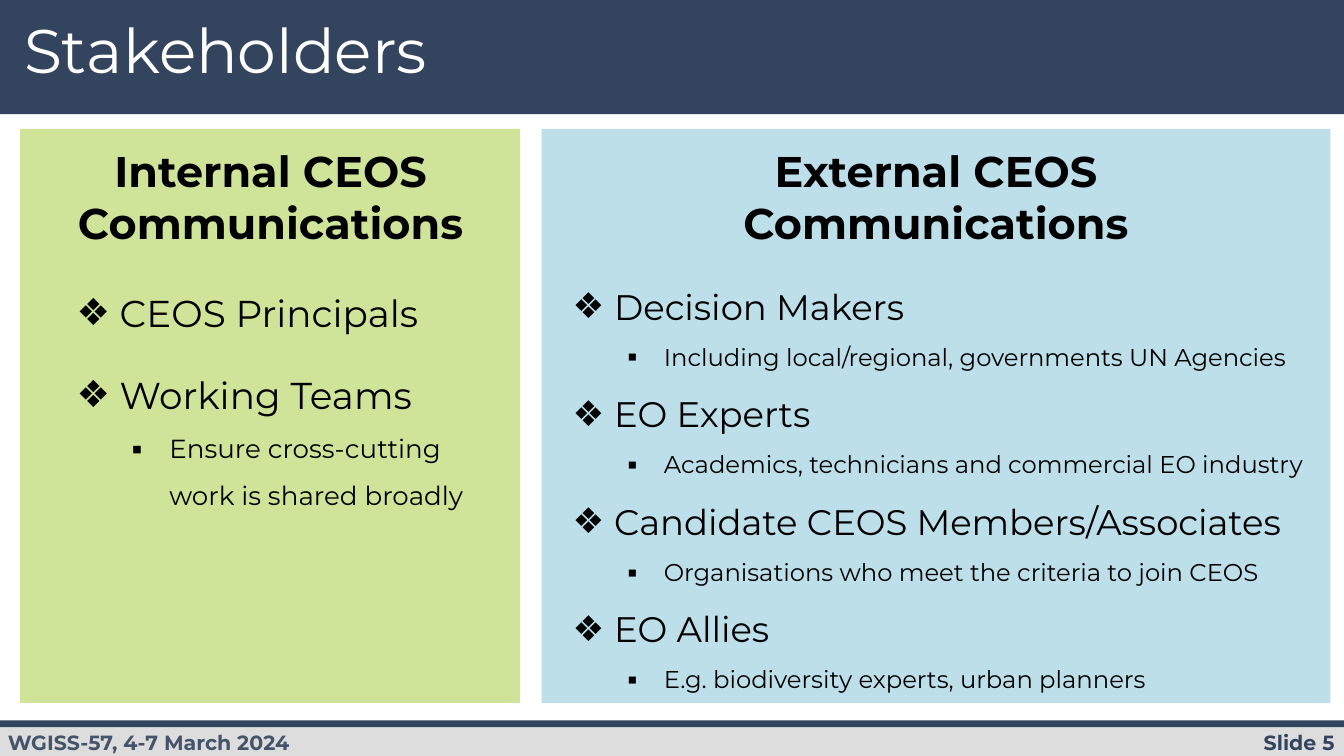
from lxml import etree
from pptx import Presentation
from pptx import util as u
from pptx.dml.color import RGBColor
from pptx.enum import shapes, text
from pptx.oxml import ns

NAVY = RGBColor(0x33, 0x44, 0x5F)
SLATE = RGBColor(0x44, 0x54, 0x6A)
GREY = RGBColor(0xDD, 0xDD, 0xDD)
BLUE = RGBColor(0x7B, 0xC0, 0xD7)
GREEN = RGBColor(0xA3, 0xCB, 0x34)
WHITE = RGBColor(0xFF, 0xFF, 0xFF)
BLACK = RGBColor(0x00, 0x00, 0x00)
LEFT, CENTER, RIGHT = text.PP_ALIGN.LEFT, text.PP_ALIGN.CENTER, text.PP_ALIGN.RIGHT


class SlideBuilder:
    font = "Montserrat"
    bullets = ("❖", "▪")

    def __init__(self, s):
        self.s = s

    def rect(self, box, color, alpha=None):
        sp = self.s.shapes.add_shape(shapes.MSO_SHAPE.RECTANGLE, *map(u.Inches, box))
        sp.shadow.inherit = False
        sp.line.fill.background()
        sp.fill.solid()
        sp.fill.fore_color.rgb = color
        if alpha:
            clr = sp.fill._xPr.find(".//" + ns.qn("a:srgbClr"))
            etree.SubElement(clr, ns.qn("a:alpha"), val=str(alpha * 1000))

    def frame(self, box, inset_x, inset_y):
        tf = self.s.shapes.add_textbox(*map(u.Inches, box)).text_frame
        tf.word_wrap = True
        tf.vertical_anchor = text.MSO_ANCHOR.TOP
        tf.margin_left = tf.margin_right = u.Inches(inset_x)
        tf.margin_top = tf.margin_bottom = u.Inches(inset_y)
        return tf

    def run(self, p, words, size, color, bold=False):
        r = p.add_run()
        r.text = words
        r.font.name = self.font
        r.font.size = u.Pt(size)
        r.font.bold = bold
        r.font.color.rgb = color

    def label(self, box, words, size, color, bold=True, align=LEFT,
              inset=(0.07, 0.04), spacing=1.0):
        p = self.frame(box, *inset).paragraphs[0]
        p.alignment = align
        p.line_spacing = spacing
        self.run(p, words, size, color, bold)

    def bullet(self, p, level, hanging):
        pPr = p._p.get_or_add_pPr()
        pPr.set("marL", str(u.Inches((0.38, 0.75)[level])))
        pPr.set("indent", str(-u.Inches(hanging)))
        bu_clr = etree.SubElement(pPr, ns.qn("a:buClr"))
        etree.SubElement(bu_clr, ns.qn("a:srgbClr"), val=str(BLACK))
        etree.SubElement(pPr, ns.qn("a:buFont"), typeface=self.font)
        etree.SubElement(pPr, ns.qn("a:buChar"), char=self.bullets[level])

    def bullet_list(self, box, items, sizes, hangings, gap=0):
        tf = self.frame(box, 0.07, 0.04)
        for i, (level, words) in enumerate(items):
            p = tf.add_paragraph() if i else tf.paragraphs[0]
            self.bullet(p, level, hangings[level])
            p.level = level
            p.line_spacing = 1.5
            p.space_before = u.Pt(gap if i and level == 0 else 0)
            self.run(p, words, sizes[level], BLACK)


def main():
    prs = Presentation()
    prs.slide_width, prs.slide_height = u.Inches(10), u.Inches(10 * 9 / 16)
    s = SlideBuilder(prs.slides.add_slide(prs.slide_layouts[6]))

    s.rect((0, 0, 10, 0.85), NAVY)
    s.rect((0, 5.39, 10, 0.24), GREY)
    s.rect((0, 5.36, 10, 0.05), NAVY)
    s.label((8.42, 5.39, 1.58, 0.26), "Slide 5", 11, NAVY, align=RIGHT)
    s.label((-0.04, 5.34, 3.16, 0.39), "WGISS-57, 4-7 March 2024", 11, SLATE,
            inset=(0.1, 0.1))
    s.label((0.11, 0.11, 5.77, 0.48), "Stakeholders", 33, WHITE, bold=False, spacing=0.9)

    s.rect((4.03, 0.96, 5.87, 4.27), BLUE, alpha=50)
    s.rect((0.15, 0.96, 3.72, 4.27), GREEN, alpha=50)
    for left, audience in ((0.41, "Internal"), (5.36, "External")):
        s.label((left, 1.01, 3.21, 0.93), f"{audience} CEOS Communications", 23, BLACK,
                align=CENTER, inset=(0.07, 0.07))

    s.bullet_list((0.44, 1.95, 3.15, 2.27), [
        (0, "CEOS Principals"),
        (0, "Working Teams"),
        (1, "Ensure cross-cutting work is shared broadly"),
    ], sizes=(20, 14), hangings=(0.32, 0.28), gap=8)
    s.bullet_list((4.12, 1.92, 5.7, 3.04), [
        (0, "Decision Makers"),
        (1, "Including local/regional, governments UN Agencies"),
        (0, "EO Experts"),
        (1, "Academics, technicians and commercial EO industry"),
        (0, "Candidate CEOS Members/Associates"),
        (1, "Organisations who meet the criteria to join CEOS"),
        (0, "EO Allies"),
        (1, "E.g. biodiversity experts, urban planners"),
    ], sizes=(19, 13), hangings=(0.31, 0.27))

    prs.save("out.pptx")


if __name__ == "__main__":
    main()
